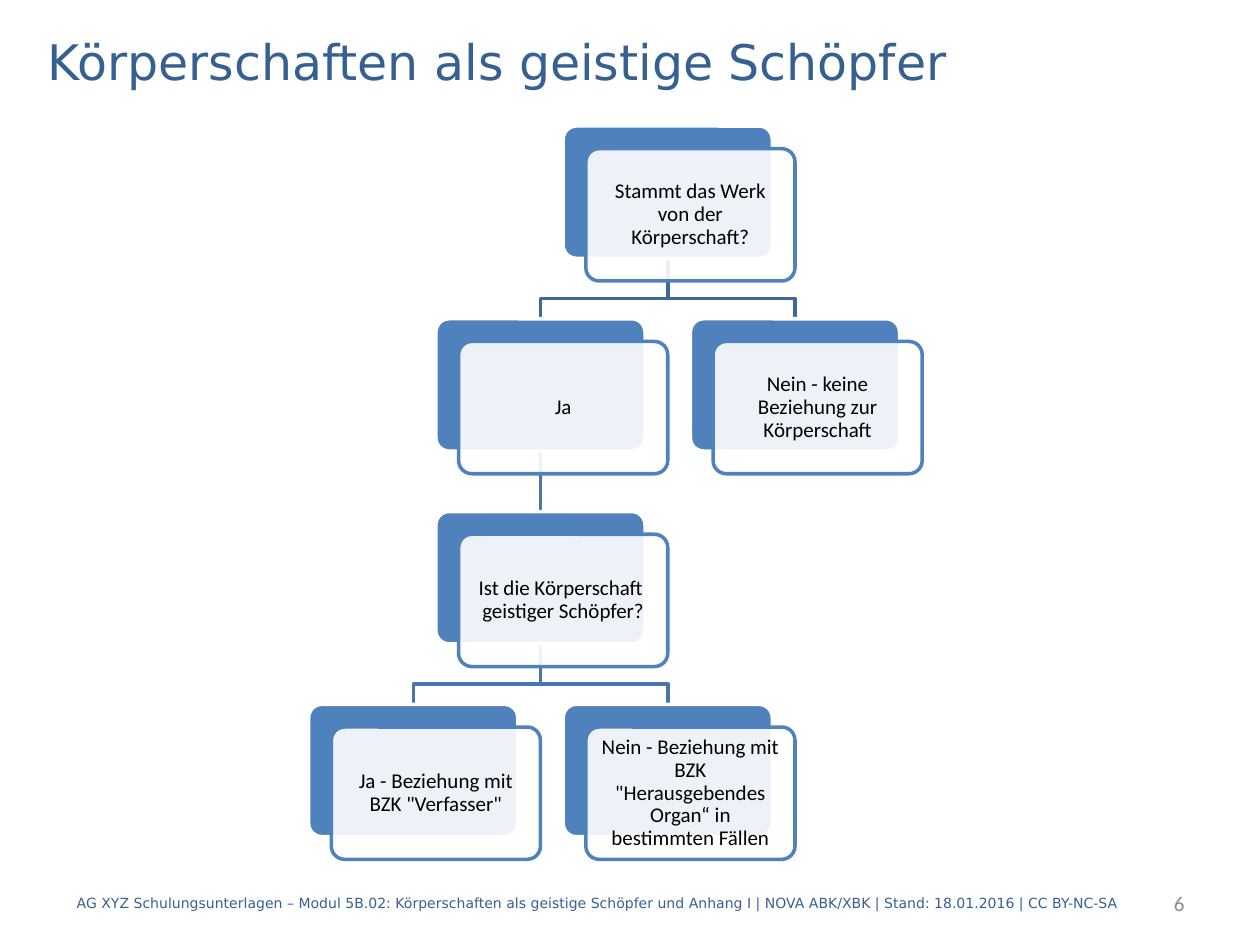
from lxml import etree
from pptx import Presentation
from pptx.dml.color import RGBColor
from pptx.enum.shapes import MSO_CONNECTOR, MSO_SHAPE
from pptx.enum.text import MSO_ANCHOR, PP_ALIGN
from pptx.oxml.ns import qn
from pptx.util import Inches, Pt

ROUND_RECT = MSO_SHAPE.ROUNDED_RECTANGLE
STRAIGHT = MSO_CONNECTOR.STRAIGHT
MIDDLE = MSO_ANCHOR.MIDDLE
LEFT, CENTER, RIGHT = PP_ALIGN.LEFT, PP_ALIGN.CENTER, PP_ALIGN.RIGHT
BOTTOM_SITE, TOP_SITE = 2, 0

NAVY, BLUE, WHITE = "376092", "4F81BD", "FFFFFF"
UPPER_LINK, LOWER_LINK = "3F6797", "4875AC"

# Decision tree: key -> (column, row, text); links: parent, child, colour
NODES = {
    "work": (2, 0, "Stammt das Werk von der Körperschaft?"),
    "yes": (1, 1, "Ja"),
    "no": (3, 1, "Nein - keine Beziehung zur Körperschaft"),
    "creator": (1, 2, "Ist die Körperschaft  geistiger Schöpfer?"),
    "author": (0, 3, 'Ja - Beziehung mit BZK "Verfasser"'),
    "issuer": (2, 3, 'Nein - Beziehung mit BZK "Herausgebendes Organ“ '
                     "in bestimmten Fällen"),
}
LINKS = [
    ("work", "yes", UPPER_LINK),
    ("work", "no", UPPER_LINK),
    ("yes", "creator", LOWER_LINK),
    ("creator", "author", LOWER_LINK),
    ("creator", "issuer", LOWER_LINK),
]
BOX_W, BOX_H = Inches(1.66), Inches(1.05)
COL_STEP, ROW_STEP = Inches(1.01), Inches(1.53)
CARD_SHIFT = Inches(0.18)
BEND = Inches(0.32)


def rgb(value):
    return RGBColor.from_string(value)


def write(sp, text, size, font, color, align, inset=None):
    tf = sp.text_frame
    frame = {"word_wrap": True, "vertical_anchor": MIDDLE}
    if inset is not None:
        for side in ("left", "top", "right", "bottom"):
            frame["margin_" + side] = inset
    for name, value in frame.items():
        setattr(tf, name, value)
    p = tf.paragraphs[0]
    p.alignment = align
    r = p.add_run()
    r.text = text
    for name, value in {"size": Pt(size), "name": font}.items():
        setattr(r.font, name, value)
    r.font.color.rgb = rgb(color)
    return p


def add_title(slide, box):
    title = slide.shapes.title
    for name, value in zip(("left", "top", "width", "height"), box):
        setattr(title, name, value)
    write(title, "Körperschaften als geistige Schöpfer", 28, "DejaVu Sans", NAVY, LEFT)


def add_footer(slide, left, top, height):
    note = slide.shapes.add_textbox(left, top, Inches(8.82), height)
    write(note, "AG XYZ Schulungsunterlagen – Modul 5B.02: Körperschaften als geistige "
          "Schöpfer und Anhang I | NOVA ABK/XBK | Stand: 18.01.2016 | CC BY-NC-SA",
          8, "DejaVu Sans", NAVY, LEFT)
    number = slide.shapes.add_textbox(left + Inches(7.4), top, Inches(1.59), height)
    write(number, "6", 12, "Calibri", "8C8C8C", RIGHT)


def add_panel(slide, left, top, fill, line):
    sp = slide.shapes.add_shape(ROUND_RECT, left, top, BOX_W, BOX_H)
    sp.adjustments[0] = 0.1
    sp.shadow.inherit = False
    sp.fill.solid()
    sp.fill.fore_color.rgb = rgb(fill)
    sp.line.color.rgb = rgb(line)
    sp.line.width = Pt(2)
    return sp


def add_node(slide, left, top, text):
    """Place a blue panel and its shifted, see-through card; return the panel."""
    panel = add_panel(slide, left, top, BLUE, WHITE)
    card = add_panel(slide, left + CARD_SHIFT, top + CARD_SHIFT, WHITE, BLUE)
    color = card.fill._xPr.find(qn("a:solidFill"))[0]
    etree.SubElement(color, qn("a:alpha")).set("val", "90000")
    p = write(card, text, 12, "Calibri", "000000", CENTER, Inches(0.08))
    p.line_spacing = 0.9
    return panel


def add_link(slide, parent, child, color):
    """Link two panels, straight or with a bend, behind all nodes."""
    x1, y1 = parent.left + BOX_W // 2, parent.top + BOX_H
    x2, y2 = child.left + BOX_W // 2, child.top
    if x1 == x2:
        link = slide.shapes.add_connector(STRAIGHT, x1, y1, x2, y2)
        link.begin_connect(parent, BOTTOM_SITE)
        link.end_connect(child, TOP_SITE)
        etree.SubElement(link._element.spPr, qn("a:effectLst"))
    else:
        path_builder = slide.shapes.build_freeform(x1, y1)
        path_builder.add_line_segments(
            [(x1, y1 + BEND), (x2, y1 + BEND), (x2, y2)], close=False)
        link = path_builder.convert_to_shape()
        link.fill.background()
        link.shadow.inherit = False
    link.line.color.rgb = rgb(color)
    link.line.width = Pt(2)
    slide.shapes._spTree.insert(2, link._element)


def add_tree(slide, left, top):
    panels = {
        key: add_node(slide, left + col * COL_STEP, top + row * ROW_STEP, text)
        for key, (col, row, text) in NODES.items()
    }
    for parent, child, color in LINKS:
        add_link(slide, panels[parent], panels[child], color)


def main():
    prs = Presentation()
    prs.slide_width, prs.slide_height = Inches(10), Inches(7.5)
    slide = prs.slides.add_slide(prs.slide_layouts[5])
    add_title(slide, (Inches(0.28), Inches(0.2), Inches(9.45), Inches(0.56)))
    add_tree(slide, Inches(2.45), Inches(1))
    add_footer(slide, Inches(0.51), Inches(6.97), Inches(0.4))
    prs.save("out.pptx")


if __name__ == "__main__":
    main()
